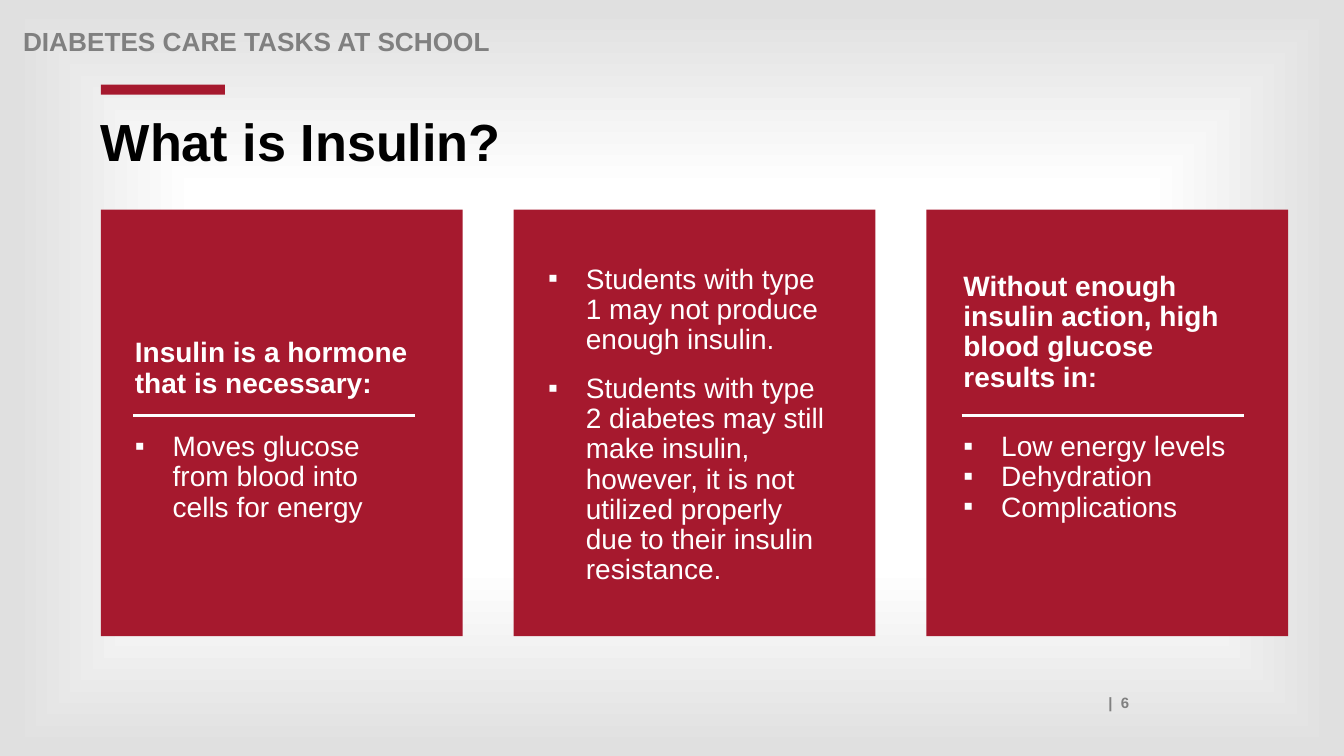
import pptx
import pptx.dml.color
import pptx.enum.shapes
import pptx.enum.text
import pptx.oxml
import pptx.oxml.ns
import pptx.util
from lxml import etree

Pt = pptx.util.Pt
RGBColor = pptx.dml.color.RGBColor
Align = pptx.enum.text.PP_ALIGN
Anchor = pptx.enum.text.MSO_ANCHOR
qn = pptx.oxml.ns.qn

# Content
HEADER = "DIABETES CARE TASKS AT SCHOOL"
TITLE = "What is Insulin?"
PAGE_NUMBER = "|  6"
CARDS = [
    {"heading": "Insulin is a hormone that is necessary:",
     "bullets": ["Moves glucose from blood into cells for energy"],
     "inset": 17.3, "heading_height": 120.2},
    {"heading": None,
     "bullets": ["Students with type 1 may not produce enough insulin.",
                 "Students with type 2 diabetes may still make insulin, however, "
                 "it is not utilized properly due to their insulin resistance."],
     "inset": 17.6},
    {"heading": "Without enough insulin action, high blood glucose results in:",
     "bullets": ["Low energy levels", "Dehydration", "Complications"],
     "inset": 19.4, "heading_height": 115.9},
]

# Style
FONT = "Arial"
RED = RGBColor(0xA6, 0x19, 0x2E)
WHITE = RGBColor(0xFF, 0xFF, 0xFF)
GRAY = RGBColor(0x80, 0x80, 0x80)
BLACK = RGBColor(0x00, 0x00, 0x00)
EDGE = RGBColor(0xE0, 0xE0, 0xE0)
BACKGROUND_STOPS = [(12, WHITE), (50, WHITE), (98, EDGE)]

# Layout, in points
SLIDE_SIZE = (960, 540)
CARD_LEFT, CARD_TOP, CARD_WIDTH, CARD_HEIGHT = 72, 149.8, 258.5, 304.6
CARD_STEP = 294.84
TEXT_TOP, TEXT_WIDTH, TEXT_HEIGHT = 168.5, 213.1, 270.7
LIST_TOP, LIST_WIDTH, LIST_HEIGHT = 305.3, 218.2, 66.2
RULE_TOP, RULE_INSET, RULE_WIDTH = 296.6, 5.8, 201.6
BULLET_INDENT = 27
PARAGRAPH_GAP = 13.3


def set_background(page):
    stops = "".join(f'<a:gs pos="{place * 1000}"><a:srgbClr val="{color}"/></a:gs>'
                    for place, color in BACKGROUND_STOPS)
    background = pptx.oxml.parse_xml(
        f'<p:bg {pptx.oxml.ns.nsdecls("p", "a")}><p:bgPr><a:gradFill rotWithShape="1">'
        f'<a:gsLst>{stops}</a:gsLst><a:path path="shape">'
        '<a:fillToRect l="50000" t="50000" r="50000" b="50000"/></a:path></a:gradFill>'
        '<a:effectLst/></p:bgPr></p:bg>')
    page.element.find(qn("p:cSld")).insert(0, background)


def add_block(page, left, top, width, height):
    block = page.shapes.add_shape(pptx.enum.shapes.MSO_SHAPE.RECTANGLE,
                                  Pt(left), Pt(top), Pt(width), Pt(height))
    block.shadow.inherit = False
    block.fill.solid()
    block.fill.fore_color.rgb = RED
    block.line.fill.background()


def add_bullet(para):
    properties = para._p.get_or_add_pPr()
    properties.set("marL", str(Pt(BULLET_INDENT)))
    properties.set("indent", str(-Pt(BULLET_INDENT)))
    etree.SubElement(properties, qn("a:buFont")).set("typeface", FONT)
    etree.SubElement(properties, qn("a:buChar")).set("char", "▪")


def add_text(page, lines, left, top, width, height, size=20, color=WHITE, bold=False,
             anchor=Anchor.TOP, align=Align.LEFT, gap=0, spacing=0.9,
             bulleted=False, margin=None):
    box = page.shapes.add_textbox(Pt(left), Pt(top), Pt(width), Pt(height))
    frame = box.text_frame
    frame.word_wrap = True
    frame.vertical_anchor = anchor
    if margin is not None:
        frame.margin_left = frame.margin_right = Pt(margin)
        frame.margin_top = frame.margin_bottom = Pt(margin)
    for index, line in enumerate(lines):
        para = frame.add_paragraph() if index else frame.paragraphs[0]
        para.alignment = align
        para.line_spacing = spacing
        para.space_before = Pt(gap)
        if bulleted:
            add_bullet(para)
        span = para.add_run()
        span.text = line
        span.font.name = FONT
        span.font.size = Pt(size)
        span.font.bold = bold
        span.font.color.rgb = color


def add_rule(page, left):
    rule = page.shapes.add_connector(pptx.enum.shapes.MSO_CONNECTOR.STRAIGHT,
                                     Pt(left), Pt(RULE_TOP),
                                     Pt(left + RULE_WIDTH), Pt(RULE_TOP))
    rule.line.color.rgb = WHITE
    rule.line.width = Pt(2)
    etree.SubElement(rule._element.spPr, qn("a:effectLst"))


def add_card(page, index, card):
    left = CARD_LEFT + index * CARD_STEP
    text_left = left + card["inset"]
    add_block(page, left, CARD_TOP, CARD_WIDTH, CARD_HEIGHT)
    if card["heading"]:
        add_text(page, [card["heading"]], text_left, TEXT_TOP, TEXT_WIDTH,
                 card["heading_height"], bold=True, anchor=Anchor.BOTTOM,
                 gap=PARAGRAPH_GAP)
        add_rule(page, text_left + RULE_INSET)
        add_text(page, card["bullets"], text_left, LIST_TOP, LIST_WIDTH, LIST_HEIGHT,
                 bulleted=True)
    else:
        add_text(page, card["bullets"], text_left, TEXT_TOP, TEXT_WIDTH, TEXT_HEIGHT,
                 anchor=Anchor.MIDDLE, gap=PARAGRAPH_GAP, bulleted=True)


def main():
    deck = pptx.Presentation()
    deck.slide_width, deck.slide_height = (Pt(side) for side in SLIDE_SIZE)
    page = deck.slides.add_slide(deck.slide_layouts[6])
    set_background(page)

    # Header, accent bar, title and page number
    add_text(page, [HEADER], 9.4, 17.3, 792, 20.2, size=18.7, color=GRAY, bold=True,
             gap=PARAGRAPH_GAP)
    add_block(page, CARD_LEFT, 60.5, 88.6, 7.2)
    add_text(page, [TITLE], CARD_LEFT, 82.8, 816.5, 41, size=37.3, color=BLACK,
             bold=True, margin=0)
    add_text(page, [PAGE_NUMBER], 87.1, 491.8, 726.5, 20.2, size=10.7, color=GRAY,
             bold=True, align=Align.RIGHT, spacing=1.0)

    # Cards
    for index, card in enumerate(CARDS):
        add_card(page, index, card)

    deck.save("out.pptx")


if __name__ == "__main__":
    main()
